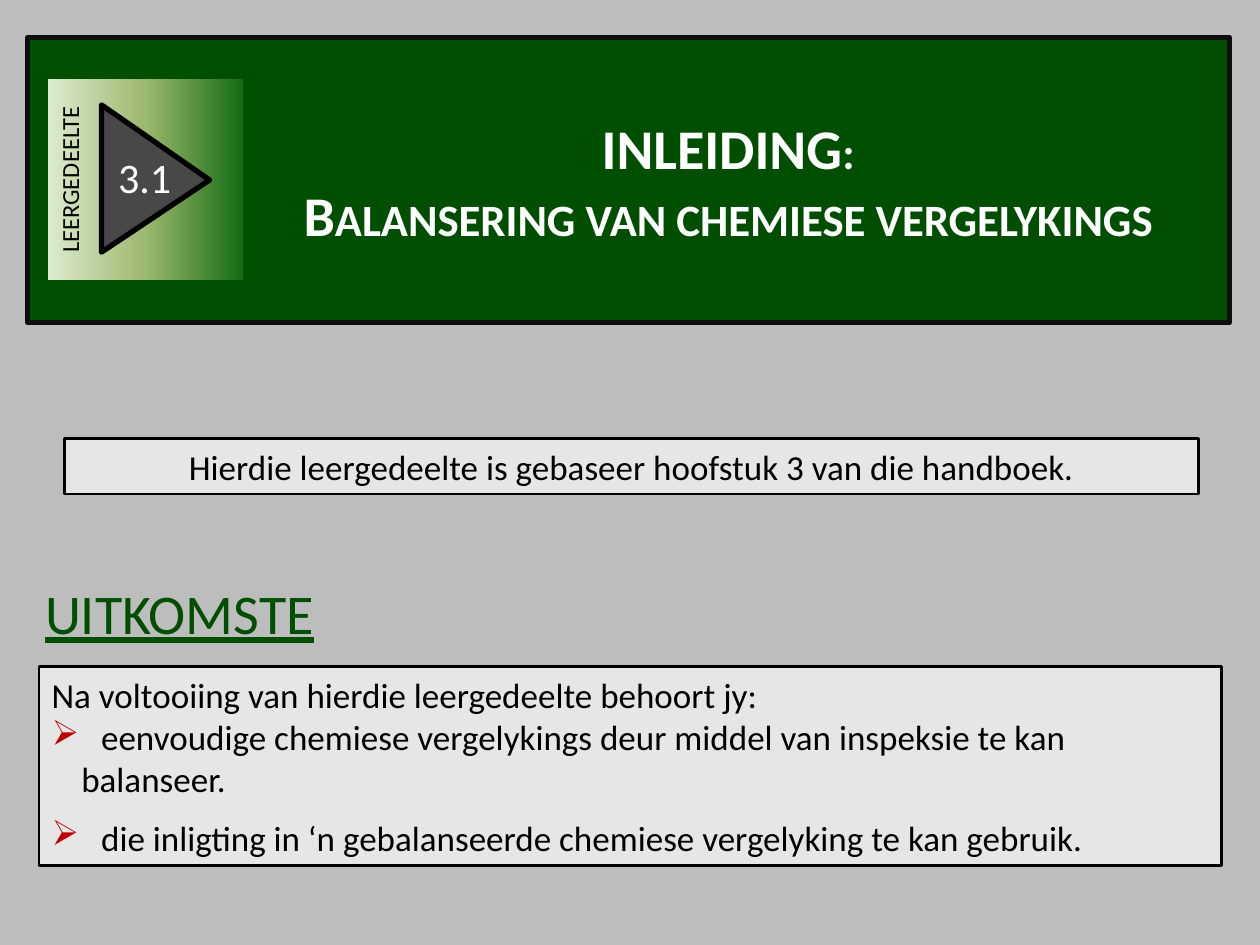
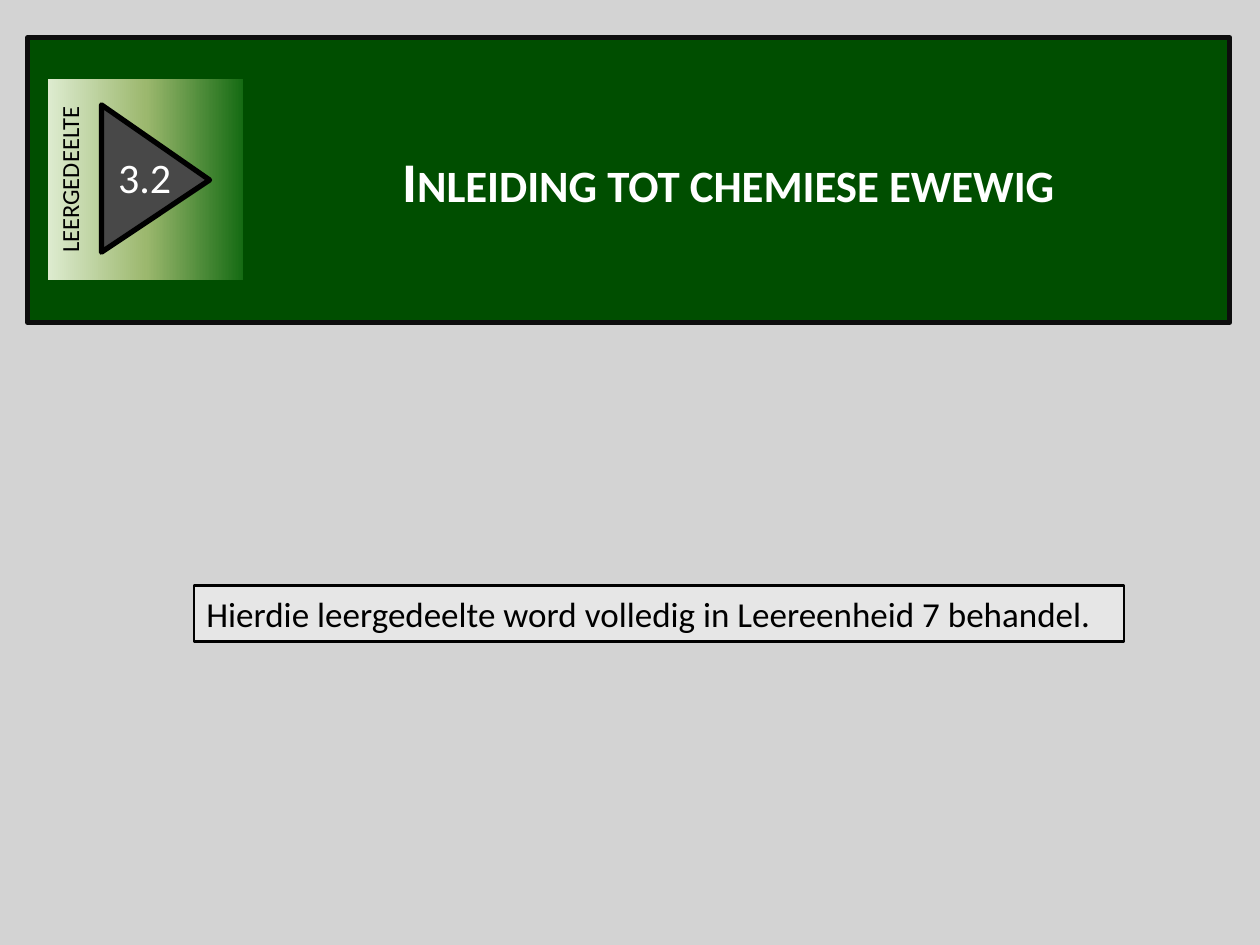
from copy import deepcopy
from dataclasses import dataclass

from lxml.etree import SubElement
from pptx import Presentation
from pptx.dml.color import RGBColor
from pptx.enum.shapes import MSO_SHAPE
from pptx.enum.text import MSO_ANCHOR, MSO_AUTO_SIZE, PP_ALIGN
from pptx.oxml.ns import qn
from pptx.util import Cm, Pt


@dataclass(frozen=True)
class Theme:
    font: str = "Calibri"
    black: str = "000000"
    white: str = "FFFFFF"
    green: str = "004E00"
    banner_line: str = "0D0D0D"
    panel: str = "E6E6E6"
    triangle: str = "484848"
    bullet: str = "C00000"
    badge_stops: tuple = ((0, "DDEBCF"), (0.5, "9CB86E"), (1, "156B13"))
    heading_size: int = 32
    number_size: int = 24
    body_size: int = 20
    label_size: int = 14
    thick: float = 3
    thin: float = 1.5


def apply(target, formats):
    for name, value in formats.items():
        setattr(target, name, value)


def rgb(value):
    return RGBColor.from_string(value)


class Deck:
    def __init__(self, theme):
        self.theme = theme
        self.prs = Presentation()
        apply(self.prs, {"slide_width": Cm(25.4), "slide_height": Cm(19.05)})
        self.s = None

    def new_slide(self, background):
        self.s = self.prs.slides.add_slide(self.prs.slide_layouts[5])
        fill = self.s.background.fill
        fill.solid()
        fill.fore_color.rgb = rgb(background)

    def fill_text(self, sp, lines, size, color, align=PP_ALIGN.LEFT,
                  anchor=MSO_ANCHOR.TOP, wrap=True, small_caps=False, **font):
        tf = sp.text_frame
        apply(tf, {"word_wrap": wrap, "auto_size": MSO_AUTO_SIZE.NONE,
                   "vertical_anchor": anchor,
                   "margin_left": Cm(0.25), "margin_right": Cm(0.25),
                   "margin_top": Cm(0.13), "margin_bottom": Cm(0.13)})
        for i, line in enumerate(lines):
            p = tf.add_paragraph() if i else tf.paragraphs[0]
            p.alignment = align
            r = p.add_run()
            r.text = line
            apply(r.font, {"name": self.theme.font, "size": Pt(size), **font})
            r.font.color.rgb = rgb(color)
            if small_caps:
                r._r.get_or_add_rPr().set("cap", "small")
        return tf

    def shape(self, kind, box, fill=None, line=None, width=0, parent=None):
        sp = (parent or self.s).shapes.add_shape(kind, *map(Cm, box))
        sp.shadow.inherit = False
        if fill:
            sp.fill.solid()
            sp.fill.fore_color.rgb = rgb(fill)
        if line:
            sp.line.color.rgb = rgb(line)
            sp.line.width = Pt(width)
        else:
            sp.line.fill.background()
        return sp

    def text(self, box, lines, size, color, parent=None, **formats):
        sp = (parent or self.s).shapes.add_textbox(*map(Cm, box))
        self.fill_text(sp, lines, size, color, **formats)

    def panel(self, box, lines, align=PP_ALIGN.LEFT):
        t = self.theme
        sp = self.shape(MSO_SHAPE.RECTANGLE, box, t.panel, t.black, t.thin)
        return self.fill_text(sp, lines, t.body_size, t.black, align,
                              MSO_ANCHOR.MIDDLE)

    def bullet(self, p):
        """Give a paragraph a red arrow, with a tab stop before its text."""
        pPr = p._p.get_or_add_pPr()
        pPr.set("marL", str(Cm(0.6)))
        pPr.set("indent", str(-Cm(0.6)))
        color = SubElement(pPr, qn("a:buClr"))
        SubElement(color, qn("a:srgbClr"), val=self.theme.bullet)
        SubElement(pPr, qn("a:buChar"), char="➢")
        tabs = SubElement(pPr, qn("a:tabLst"))
        SubElement(tabs, qn("a:tab"), pos=str(Cm(1)), algn="l")

    def badge(self, number):
        t = self.theme
        group = self.s.shapes.add_group_shape()
        label = self.shape(MSO_SHAPE.RECTANGLE, (0.91, 1.65, 4.06, 3.94),
                           parent=group)
        label.rotation = 270
        label.fill.gradient()
        label.fill.gradient_angle = 270
        first = next(label.element.iter(qn("a:gs")))
        first.addnext(deepcopy(first))
        for stop, (position, color) in zip(label.fill.gradient_stops,
                                           t.badge_stops):
            stop.color.rgb = rgb(color)
            stop.position = position
        self.fill_text(label, ["LEERGEDEELTE"], t.label_size, t.black,
                       PP_ALIGN.CENTER)
        arrow = self.shape(MSO_SHAPE.ISOSCELES_TRIANGLE,
                           (1.65, 2.51, 2.97, 2.18), t.triangle, t.black,
                           t.thick, group)
        arrow.rotation = 90
        arrow.adjustments[0] = 0.51
        self.text((2.13, 2.92, 1.6, 1.27), [number], t.number_size, t.white,
                  group, wrap=False)

    def banner(self, number, lines, top, height):
        t = self.theme
        band = self.shape(MSO_SHAPE.RECTANGLE, (0.56, 0.76, 24.23, 5.74),
                          t.green, t.banner_line, t.thick)
        title = self.s.shapes.title
        apply(title, {"left": Cm(5.36), "top": Cm(top),
                      "width": Cm(18.64), "height": Cm(height)})
        self.fill_text(title, lines, t.heading_size, t.white, PP_ALIGN.CENTER,
                       small_caps=True, bold=True)
        band.element.addnext(title.element)
        self.badge(number)

    def heading(self, box, line):
        t = self.theme
        self.text(box, [line], t.heading_size, t.green, underline=True)


def outcomes_slide(deck):
    deck.new_slide("BDBDBD")
    deck.banner("3.1", ["INLEIDING:", "Balansering van chemiese vergelykings"],
                2.16, 3)
    deck.panel((1.3, 8.84, 22.86, 1.12),
               ["Hierdie leergedeelte is gebaseer hoofstuk 3 van die handboek."],
               PP_ALIGN.CENTER)
    deck.heading((0.66, 11.53, 6.78, 1.63), "UITKOMSTE")
    tf = deck.panel((0.79, 13.44, 23.83, 4.01), [
        "Na voltooiing van hierdie leergedeelte behoort jy:",
        "\teenvoudige chemiese vergelykings deur middel van inspeksie te kan balanseer.",
        "\tdie inligting in ‘n gebalanseerde chemiese vergelyking te kan gebruik.",
    ])
    tf.paragraphs[-1].space_before = Pt(9.5)
    for p in tf.paragraphs[1:]:
        deck.bullet(p)


def equilibrium_slide(deck):
    deck.new_slide("D3D3D3")
    deck.banner("3.2", ["Inleiding tot chemiese ewewig"], 2.82, 1.63)
    deck.panel((3.91, 11.81, 18.75, 1.12),
               ["Hierdie leergedeelte word volledig in Leereenheid 7 behandel."])


def main():
    deck = Deck(Theme())
    outcomes_slide(deck)
    equilibrium_slide(deck)
    deck.prs.save("out.pptx")


if __name__ == "__main__":
    main()
